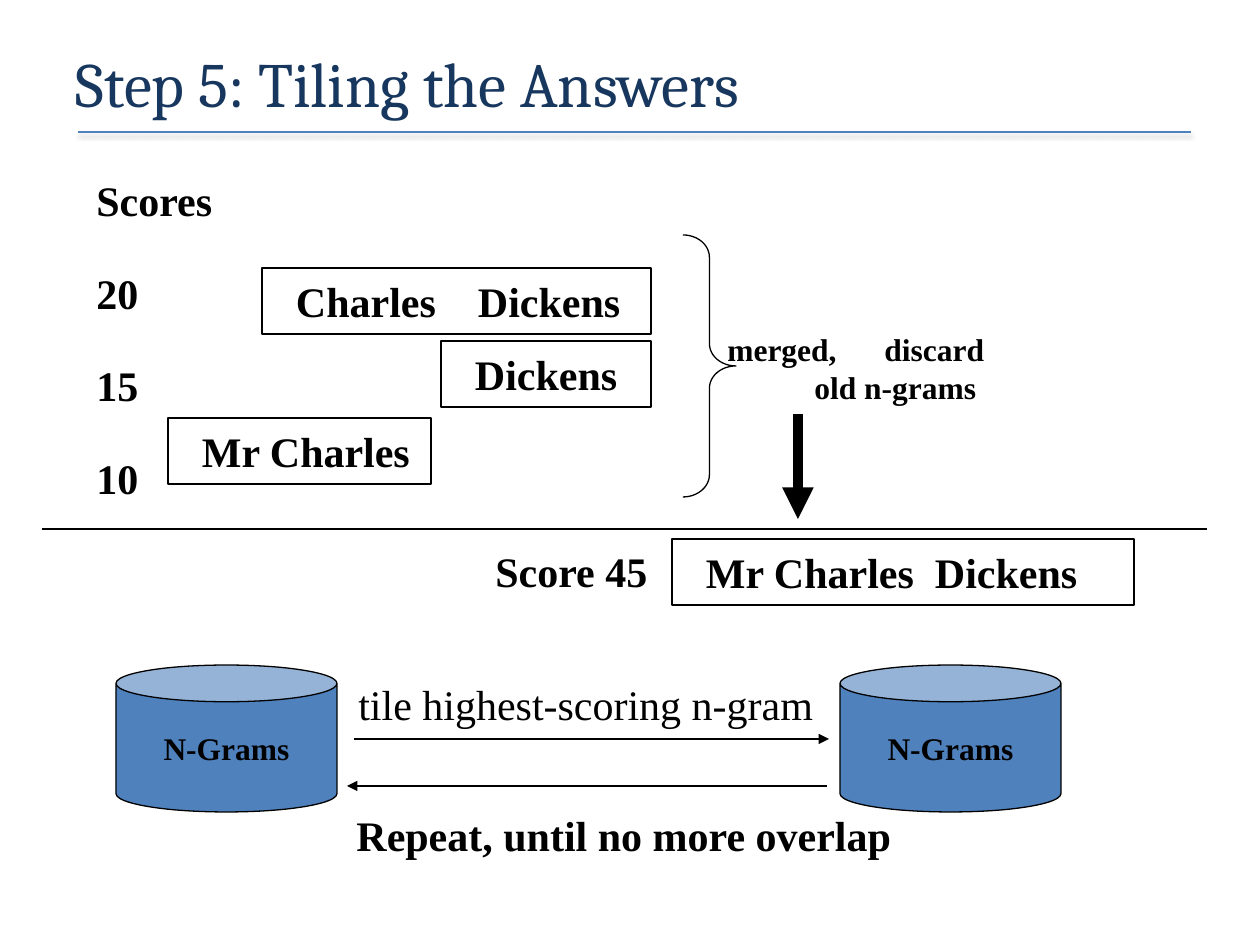
from dataclasses import dataclass

from lxml import etree
from pptx import Presentation
from pptx.dml.color import RGBColor
from pptx.enum.shapes import MSO_CONNECTOR, MSO_SHAPE
from pptx.enum.text import MSO_ANCHOR, PP_ALIGN
from pptx.oxml.ns import qn
from pptx.util import Emu, Pt

RECTANGLE, CAN, BRACE = MSO_SHAPE.RECTANGLE, MSO_SHAPE.CAN, MSO_SHAPE.RIGHT_BRACE
STRAIGHT = MSO_CONNECTOR.STRAIGHT
TOP, MIDDLE = MSO_ANCHOR.TOP, MSO_ANCHOR.MIDDLE
LEFT, CENTER = PP_ALIGN.LEFT, PP_ALIGN.CENTER
TITLE_ONLY = 5


@dataclass(frozen=True)
class Theme:
    """Colours, fonts and sizes of the slide."""
    ink: RGBColor = RGBColor(0x00, 0x00, 0x00)
    title: RGBColor = RGBColor(0x17, 0x37, 0x5E)
    accent: RGBColor = RGBColor(0x4F, 0x81, 0xBD)
    title_font: str = "Cambria"
    body_font: str = "Times New Roman"
    title_size: int = 36
    body_size: int = 24
    label_size: int = 18
    thin: float = 0.75
    rule: float = 1
    box: float = 1.5
    thick: float = 6


THEME = Theme()


def px(length):
    """Turn pixels at 126 to the inch into EMU."""
    return Emu(round(length * 914400 / 126))


def style_paragraph(paragraph, size, bold=True, align=LEFT):
    """Set the body font on every run of a paragraph."""
    paragraph.alignment = align
    for run in paragraph.runs:
        font = run.font
        font.name, font.size, font.bold = THEME.body_font, Pt(size), bold
        font.color.rgb = THEME.ink


def add_tab_stop(paragraph, position):
    """Give a paragraph one left tab stop."""
    properties = paragraph._p.get_or_add_pPr()
    stops = etree.SubElement(properties, qn("a:tabLst"))
    etree.SubElement(stops, qn("a:tab"), pos=str(px(position)), algn="l")


def add_title(slide, text):
    """Fill the title placeholder."""
    title = slide.shapes.title
    title.left, title.top, title.width, title.height = px(63), px(38), px(1134), px(89)
    frame = title.text_frame
    frame.text = text
    frame.vertical_anchor = MIDDLE
    paragraph = frame.paragraphs[0]
    paragraph.alignment = LEFT
    font = paragraph.runs[0].font
    font.name, font.size = THEME.title_font, Pt(THEME.title_size)
    font.color.rgb = THEME.title


def add_text(slide, left, top, width, height, lines, size=THEME.body_size, bold=True):
    """Add a text box with one paragraph a line and return its paragraphs."""
    frame = slide.shapes.add_textbox(px(left), px(top), px(width), px(height)).text_frame
    frame.word_wrap = True
    frame.vertical_anchor = TOP
    frame.text = "\n".join(lines)
    for paragraph in frame.paragraphs:
        style_paragraph(paragraph, size, bold)
    return frame.paragraphs


def add_outline(slide, kind, left, top, width, height, weight):
    """Add an unfilled preset shape with a dark outline."""
    shape = slide.shapes.add_shape(kind, px(left), px(top), px(width), px(height))
    shape.shadow.inherit = False
    shape.fill.background()
    shape.line.color.rgb = THEME.ink
    shape.line.width = Pt(weight)
    return shape


def add_ngram_box(slide, left, top, width, text, tab=None):
    """Add a boxed n-gram, with a tab stop between its tiles if needed."""
    frame = add_outline(slide, RECTANGLE, left, top, width, 66, THEME.box).text_frame
    frame.word_wrap = False
    frame.margin_left = px(34)
    frame.margin_right = 0
    frame.vertical_anchor = MIDDLE
    frame.text = text
    paragraph = frame.paragraphs[0]
    style_paragraph(paragraph, THEME.body_size)
    if tab:
        frame.word_wrap = True
        add_tab_stop(paragraph, tab)


def add_store(slide, left):
    """Add an n-gram store."""
    can = add_outline(slide, CAN, left, 665, 221, 147, THEME.thin)
    can.fill.solid()
    can.fill.fore_color.rgb = THEME.accent
    frame = can.text_frame
    frame.word_wrap = False
    frame.vertical_anchor = MIDDLE
    frame.text = "N-Grams"
    style_paragraph(frame.paragraphs[0], THEME.label_size, align=CENTER)


def add_line(slide, start, end, weight, color=THEME.ink, arrow=False):
    """Add a straight line and return its empty effect list."""
    line = slide.shapes.add_connector(STRAIGHT, *map(px, start + end))
    line.line.color.rgb = color
    line.line.width = Pt(weight)
    if arrow:
        etree.SubElement(line.line._get_or_add_ln(), qn("a:tailEnd"), type="triangle")
    return etree.SubElement(line._element.spPr, qn("a:effectLst"))


def add_title_rule(slide):
    """Add the softly shadowed rule under the title."""
    effects = add_line(slide, (78, 132), (1191, 132), THEME.rule, THEME.accent)
    shadow = etree.SubElement(effects, qn("a:outerShdw"), blurRad=str(Pt(3.1)),
                              dist=str(Pt(1.6)), dir="5400000", rotWithShape="0")
    color = etree.SubElement(shadow, qn("a:srgbClr"), val=str(THEME.ink))
    etree.SubElement(color, qn("a:alpha"), val="38000")


def add_scores(slide):
    """Add the column of scores."""
    scores = add_text(slide, 84, 174, 160, 330, ["Scores", "20", "15", "10"])
    for paragraph in scores:
        paragraph.line_spacing = 0.9
    for paragraph in scores[1:]:
        paragraph.space_before = Pt(27)


def add_merge(slide):
    """Add the brace, its label and the arrow to the merged n-gram."""
    brace = add_outline(slide, BRACE, 683, 235, 53, 262, THEME.thin)
    brace.adjustments[0] = 0.42
    label = add_text(slide, 715, 324, 310, 85, ["merged,\tdiscard", "\told n-grams"],
                     THEME.label_size)
    for paragraph, stop in zip(label, (157, 87)):
        add_tab_stop(paragraph, stop)
    add_line(slide, (798, 414), (798, 519), THEME.thick, arrow=True)


def main():
    """Build and save the slide."""
    presentation = Presentation()
    presentation.slide_width, presentation.slide_height = px(1260), px(945)
    slide = presentation.slides.add_slide(presentation.slide_layouts[TITLE_ONLY])
    add_title_rule(slide)
    add_title(slide, "Step 5: Tiling the Answers")
    add_scores(slide)
    add_ngram_box(slide, 262, 268, 389, "Charles\tDickens", 182)
    add_ngram_box(slide, 441, 341, 210, "Dickens")
    add_ngram_box(slide, 168, 418, 263, "Mr Charles")
    add_merge(slide)
    add_line(slide, (42, 529), (1207, 529), THEME.thin)
    add_text(slide, 483, 539, 185, 63, ["Score 45"])
    add_ngram_box(slide, 672, 539, 462, "Mr Charles\tDickens", 229)
    for left in (116, 840):
        add_store(slide, left)
    add_text(slide, 346, 672, 490, 63, ["tile highest-scoring n-gram"], bold=False)
    add_line(slide, (354, 739), (829, 739), THEME.thin, arrow=True)
    add_line(slide, (827, 786), (347, 786), THEME.thin, arrow=True)
    add_text(slide, 344, 803, 575, 63, ["Repeat, until no more overlap"])
    presentation.save("out.pptx")


if __name__ == "__main__":
    main()
